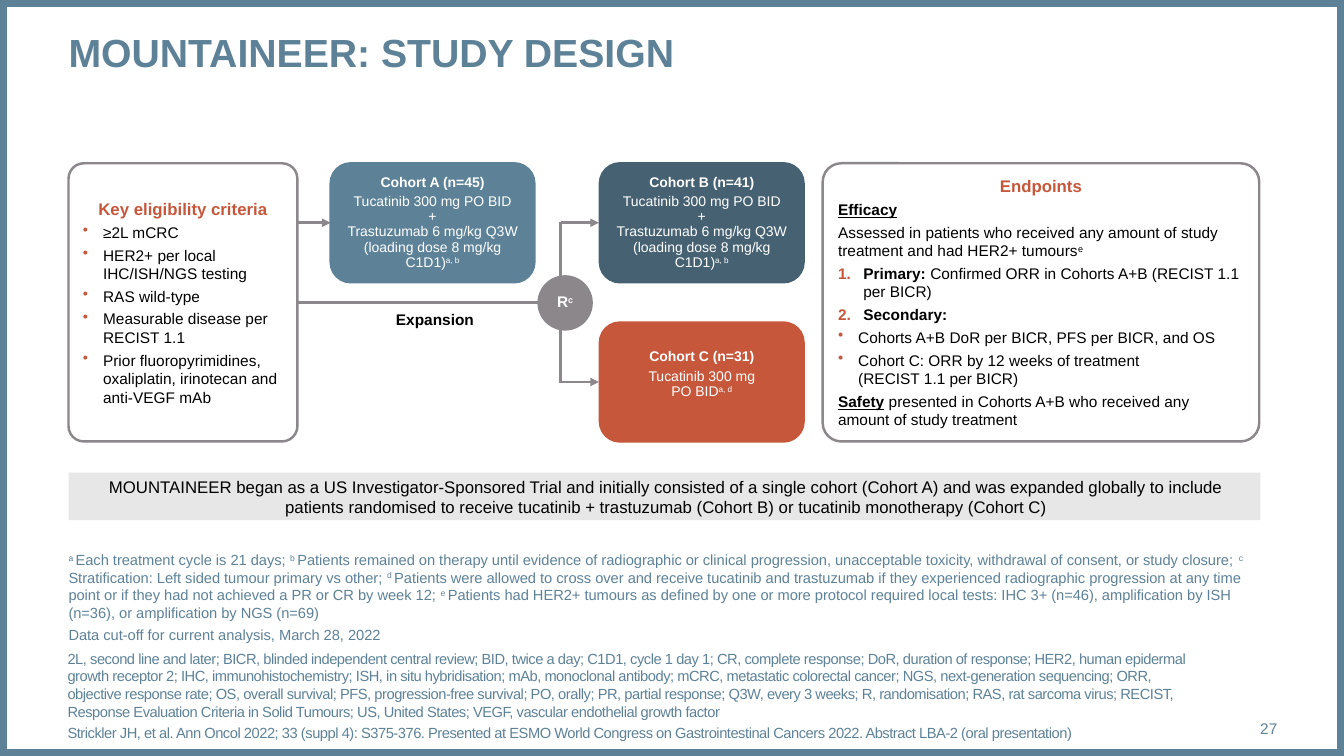
from lxml import etree
from pptx import Presentation
from pptx import util as u
from pptx.dml.color import RGBColor
from pptx.enum import shapes, text
from pptx.oxml.ns import qn

BLUE, NAVY, RUST, GREY = "5D8298", "466172", "C6573B", "8B878B"
BLACK, WHITE, PALE = "000000", "FFFFFF", "E8E7E8"
LEFT, CENTER, RIGHT = text.PP_ALIGN.LEFT, text.PP_ALIGN.CENTER, text.PP_ALIGN.RIGHT
TOP, MIDDLE, BOTTOM = text.MSO_ANCHOR.TOP, text.MSO_ANCHOR.MIDDLE, text.MSO_ANCHOR.BOTTOM
ROUNDED, RECT = shapes.MSO_SHAPE.ROUNDED_RECTANGLE, shapes.MSO_SHAPE.RECTANGLE
rgb = RGBColor.from_string

deck = Presentation()
deck.slide_width, deck.slide_height = u.Inches(13.33), u.Inches(7.5)
slide = deck.slides.add_slide(deck.slide_layouts[1])


def write(frame, paragraphs, size, color, bold=False, align=LEFT, anchor=TOP,
          insets=(0.1, 0.05, 0.1, 0.05), before=0, after=0, spacing=1.0):
    """Fill a frame with (text, overrides) pairs.

    "|" parts the runs; a run that starts with ^ is superscript, * bold, _ bold underlined.
    Overrides are size, color, bold, align, after and bullet ("•" or "1.").
    """
    frame.word_wrap, frame.auto_size = True, text.MSO_AUTO_SIZE.NONE
    frame.vertical_anchor = anchor
    frame.margin_left, frame.margin_top, frame.margin_right, frame.margin_bottom = map(u.Inches, insets)
    for index, (content, own) in enumerate(paragraphs):
        paragraph = frame.add_paragraph() if index else frame.paragraphs[0]
        properties = paragraph._p.get_or_add_pPr()
        bullet = own.get("bullet")
        indent = u.Inches({"•": 0.2, "1.": 0.25}.get(bullet, 0))
        properties.set("marL", str(indent))
        properties.set("indent", str(-indent))
        if bullet:
            bullet_color = etree.SubElement(properties, qn("a:buClr"))
            etree.SubElement(bullet_color, qn("a:srgbClr"), val=RUST)
        if bullet == "•":
            etree.SubElement(properties, qn("a:buChar"), char=bullet)
        elif bullet:
            etree.SubElement(properties, qn("a:buAutoNum"), type="arabicPeriod")
        else:
            etree.SubElement(properties, qn("a:buNone"))
        paragraph.alignment = own.get("align", align)
        paragraph.line_spacing = spacing
        paragraph.space_before = u.Pt(before if index else 0)
        paragraph.space_after = u.Pt(own.get("after", after))
        paragraph.font.name = "Arial"
        paragraph.font.size = u.Pt(own.get("size", size))
        paragraph.font.bold = own.get("bold", bold)
        paragraph.font.color.rgb = rgb(own.get("color", color))
        for part in content.split("|"):
            mark = part[0] if part[0] in "^*_" else ""
            for line_number, line in enumerate(part[len(mark):].split("\n")):
                if line_number:
                    paragraph.add_line_break()
                run = paragraph.add_run()
                run.text = line
                if mark == "^":
                    run._r.get_or_add_rPr().set("baseline", "30000")
                elif mark:
                    run.font.bold = True
                    run.font.underline = mark == "_"


def add_box(kind, bounds, fill=None, outline=None, weight=1.75, corner=None):
    box = slide.shapes.add_shape(kind, *map(u.Inches, bounds))
    box.shadow.inherit = False
    if fill:
        box.fill.solid()
        box.fill.fore_color.rgb = rgb(fill)
    else:
        box.fill.background()
    if outline:
        box.line.color.rgb = rgb(outline)
        box.line.width = u.Pt(weight)
    else:
        box.line.fill.background()
    if corner:
        box.adjustments[0] = corner
    return box


add_box(RECT, (0, 0, 13.33, 7.5), outline=BLUE, weight=10)

# Title, abbreviations and reference
title, abbreviations = slide.placeholders
NO_INSETS = (0, 0, 0, 0)
for placeholder, bounds in ((title, (0.68, 0.28, 11.99, 0.94)),
                            (abbreviations, (0.67, 6.96, 11.13, 0.4))):
    placeholder.left, placeholder.top, placeholder.width, placeholder.height = map(u.Inches, bounds)
write(title.text_frame, [("MOUNTAINEER: STUDY DESIGN", {})], 28, BLUE, bold=True, insets=NO_INSETS)
write(abbreviations.text_frame, [
    ("2L, second line and later; BICR, blinded independent central review; BID, twice a day; "
     "C1D1, cycle 1 day 1; CR, complete response; DoR, duration of response; HER2, human epidermal "
     "growth receptor 2; IHC, immunohistochemistry; ISH, in situ hybridisation; mAb, monoclonal "
     "antibody; mCRC, metastatic colorectal cancer; NGS, next-generation sequencing; ORR, objective "
     "response rate; OS, overall survival; PFS, progression-free survival; PO, orally; PR, partial "
     "response; Q3W, every 3 weeks; R, randomisation; RAS, rat sarcoma virus; RECIST, Response "
     "Evaluation Criteria in Solid Tumours; US, United States; VEGF, vascular endothelial growth factor", {}),
    ("Strickler JH, et al. Ann Oncol 2022; 33 (suppl 4): S375-376. Presented at ESMO World Congress "
     "on Gastrointestinal Cancers 2022. Abstract LBA-2 (oral presentation)", {}),
], 10.5, BLUE, anchor=BOTTOM, insets=NO_INSETS, before=3)
for paragraph in abbreviations.text_frame.paragraphs:
    for run in paragraph.runs:
        run._r.get_or_add_rPr().set("spc", "-30")

# Study flow lines
for x1, y1, x2, y2, has_arrow in (
    (2.95, 2.21, 3.28, 2.21, True),
    (5.56, 2.21, 5.94, 2.21, True),
    (5.56, 3.79, 5.94, 3.79, True),
    (5.56, 3.8, 5.56, 2.2, False),
    (2.95, 3, 5.45, 3, False),
):
    flow = slide.shapes.add_connector(shapes.MSO_CONNECTOR.STRAIGHT, *map(u.Inches, (x1, y1, x2, y2)))
    flow.line.color.rgb = rgb(GREY)
    flow.line.width = u.Pt(2)
    if has_arrow:
        etree.SubElement(flow.line._get_or_add_ln(), qn("a:tailEnd"), type="triangle")
    etree.SubElement(flow._element.spPr, qn("a:effectLst"))

# Cohorts
COMBINATION = "Tucatinib 300 mg PO BID\n+\nTrastuzumab 6 mg/kg Q3W\n(loading dose 8 mg/kg\nC1D1)|^a, b"
for heading, regimen, left, top, color, bottom_inset in (
    ("Cohort A (n=45)", COMBINATION, 3.28, 1.62, BLUE, 0.05),
    ("Cohort B (n=41)", COMBINATION, 5.95, 1.62, NAVY, 0.05),
    ("Cohort C (n=31)", "Tucatinib 300 mg\nPO BID|^a, d", 5.95, 3.2, RUST, 0.2),
):
    cohort = add_box(ROUNDED, (left, top, 2.02, 1.18), color, color, corner=0.169)
    write(cohort.text_frame, [(heading, {"bold": True, "after": 3}), (regimen, {})], 10, WHITE,
          align=CENTER, anchor=MIDDLE, insets=(0.1, 0.05, 0.1, bottom_inset), spacing=0.9)

randomisation = add_box(shapes.MSO_SHAPE.OVAL, (5.33, 2.73, 0.55, 0.55), GREY)
write(randomisation.text_frame, [("R|^c", {})], 11, WHITE, bold=True, align=CENTER, anchor=MIDDLE,
      insets=(0, 0.05, 0, 0.05), spacing=0.9)

# Eligibility and endpoints
HEADING = {"size": 12, "color": RUST, "bold": True, "align": CENTER}
BULLET, NUMBER = {"bullet": "•"}, {"bullet": "1."}
eligibility = [
    ("Key eligibility criteria", HEADING),
    ("≥2L mCRC", BULLET),
    ("HER2+ per local IHC/ISH/NGS testing", BULLET),
    ("RAS wild-type", BULLET),
    ("Measurable disease per RECIST 1.1", BULLET),
    ("Prior fluoropyrimidines, oxaliplatin, irinotecan and anti-VEGF mAb", BULLET),
]
endpoints = [
    ("Endpoints", HEADING),
    ("_Efficacy", {}),
    ("Assessed in patients who received any amount of study treatment and had HER2+ tumours|^e", {}),
    ("*Primary: |Confirmed ORR in Cohorts A+B (RECIST 1.1 per BICR)", NUMBER),
    ("*Secondary:", NUMBER),
    ("Cohorts A+B DoR per BICR, PFS per BICR, and OS", BULLET),
    ("Cohort C: ORR by 12 weeks of treatment\n(RECIST 1.1 per BICR)", BULLET),
    ("_Safety| presented in Cohorts A+B who received any amount of study treatment", {}),
]
for left, width, criteria in ((0.68, 2.27, eligibility), (8.16, 4.33, endpoints)):
    panel = add_box(ROUNDED, (left, 1.62, width, 2.76), WHITE, GREY, corner=0.067)
    write(panel.text_frame, criteria, 11, BLACK, anchor=MIDDLE, after=3)

summary = add_box(RECT, (0.68, 4.69, 11.82, 0.47), PALE)
write(summary.text_frame, [
    ("MOUNTAINEER began as a US Investigator-Sponsored Trial and initially consisted of a single cohort "
     "(Cohort A) and was expanded globally to include\npatients randomised to receive tucatinib + "
     "trastuzumab (Cohort B) or tucatinib monotherapy (Cohort C)", {}),
], 12, BLACK, align=CENTER, anchor=MIDDLE, insets=(0.08, 0.04, 0.04, 0.04))

# Expansion label, footnotes and page number
expansion, footnotes, page_number = (
    slide.shapes.add_textbox(*map(u.Inches, bounds)).text_frame
    for bounds in ((3.83, 3.04, 0.93, 0.26), (0.68, 5.28, 11.74, 1.1), (11.81, 7.03, 0.86, 0.4)))
write(expansion, [("Expansion", {})], 11, BLACK, bold=True, align=CENTER, insets=(0.08, 0.04, 0.04, 0.04))
write(footnotes, [
    ("^a |Each treatment cycle is 21 days; |^b |Patients remained on therapy until evidence of "
     "radiographic or clinical progression, unacceptable toxicity, withdrawal of consent, or study "
     "closure; |^c |Stratification: Left sided tumour primary vs other; |^d |Patients were allowed to "
     "cross over and receive tucatinib and trastuzumab if they experienced radiographic progression at "
     "any time point or if they had not achieved a PR or CR by week 12; |^e |Patients had HER2+ tumours "
     "as defined by one or more protocol required local tests: IHC 3+ (n=46), amplification by ISH "
     "(n=36), or amplification by NGS (n=69)", {}),
    ("Data cut-off for current analysis, March 28, 2022", {}),
], 10.5, BLUE, anchor=BOTTOM, insets=NO_INSETS, after=3)
write(page_number, [("27", {})], 11, BLUE, align=RIGHT, anchor=MIDDLE, insets=NO_INSETS)

deck.save("out.pptx")
